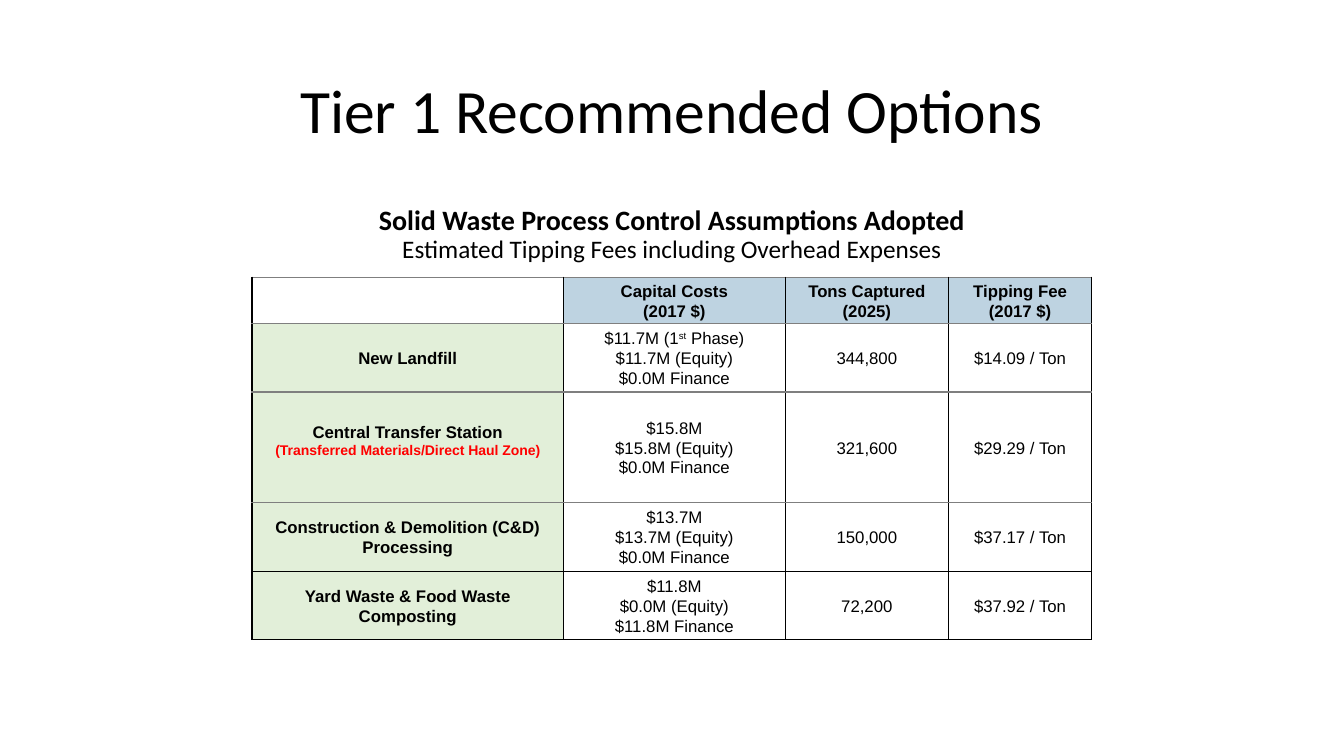
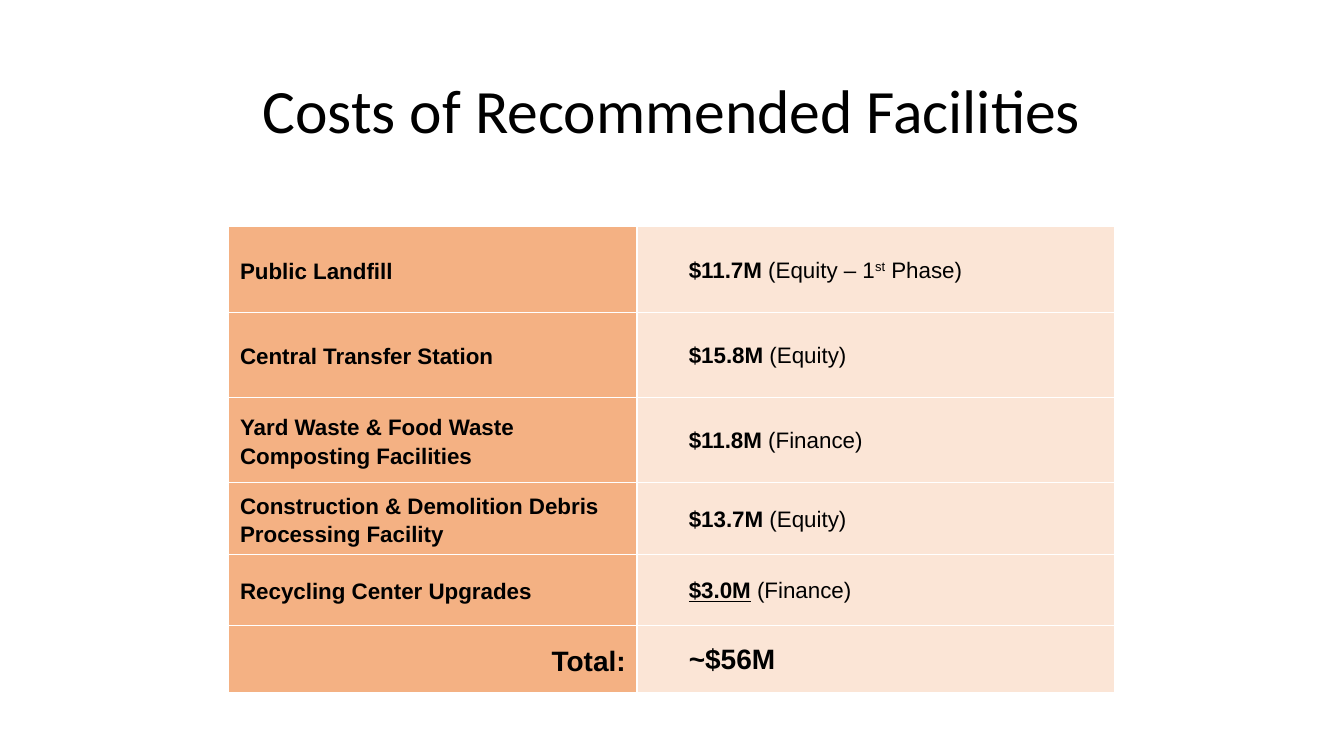
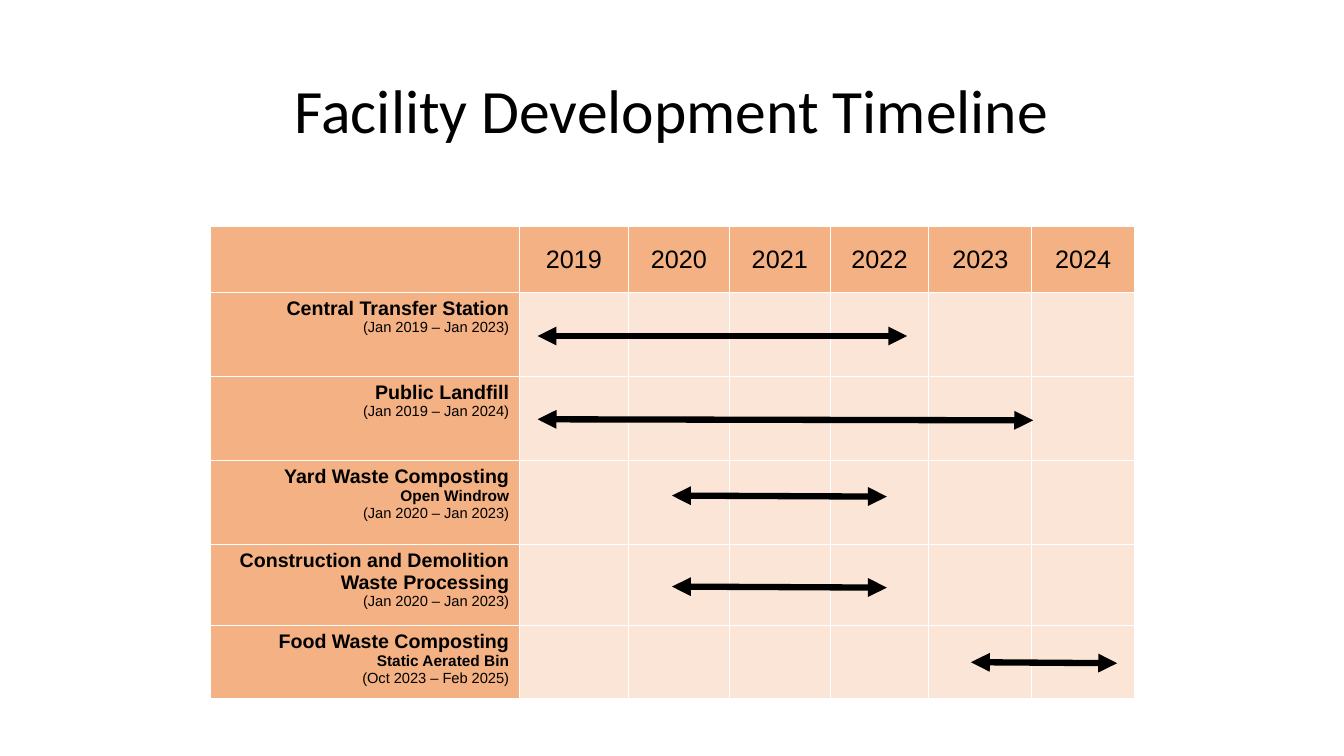
import pptx
import pptx.dml.color
import pptx.enum.shapes
import pptx.enum.text
import pptx.oxml
import pptx.oxml.ns
import pptx.util

Pt = pptx.util.Pt
ALIGN = pptx.enum.text.PP_ALIGN
MIDDLE = pptx.enum.text.MSO_ANCHOR.MIDDLE
TOP = pptx.enum.text.MSO_ANCHOR.TOP

COLORS = {
    "black": "000000", "white": "FFFFFF", "gray": "7F7F7F", "red": "FF0000",
    "blue": "BED3E1", "green": "E2EFD9", "orange": "F4B183", "peach": "FBE5D6",
}
RAISED_ST = ("st", {"raised": True})


def rgb(name):
    return pptx.dml.color.RGBColor.from_string(COLORS[name])


class Slides:
    """Holds the shared style and the slide being filled."""

    title_frame = (66, 29, 828, 104)

    def __init__(self):
        self.deck = pptx.Presentation()
        self.deck.slide_width, self.deck.slide_height = Pt(960), Pt(540)
        self.page = None

    def start(self, title):
        self.page = self.deck.slides.add_slide(self.deck.slide_layouts[5])
        box = self.page.shapes.title
        box.left, box.top, box.width, box.height = map(Pt, self.title_frame)
        box.text_frame.vertical_anchor = MIDDLE
        self.fill_text(box.text_frame, [title], font="Calibri", size=44, spacing=0.9)

    def fill_text(self, frame, lines, font="Arial", align=ALIGN.CENTER, spacing=1.0,
                  **base):
        """A line is a string or a list of spans; a span is a string or (string, style)."""
        frame.word_wrap = True
        for index, line in enumerate(lines):
            para = frame.paragraphs[0] if index == 0 else frame.add_paragraph()
            para.alignment, para.line_spacing = align, spacing
            para.space_before = Pt(0)
            for span in line if isinstance(line, list) else [line]:
                text, style = span if isinstance(span, tuple) else (span, {})
                self.add_span(para, text, font, **{**base, **style})

    def add_span(self, para, text, font, size=12, bold=False, color="black",
                 underline=False, raised=False):
        span = para.add_run()
        span.text = text
        span.font.name, span.font.size = font, Pt(size)
        span.font.bold, span.font.underline = bold, underline
        span.font.color.rgb = rgb(color)
        if raised:
            span._r.get_or_add_rPr().set("baseline", "30000")

    def text(self, frame, lines, **style):
        box = self.page.shapes.add_textbox(*map(Pt, frame))
        self.fill_text(box.text_frame, lines, **style)

    def table(self, left, top, widths, heights):
        table = self.page.shapes.add_table(
            len(heights), len(widths), Pt(left), Pt(top),
            Pt(sum(widths)), Pt(sum(heights))).table
        table.first_row = table.horz_banding = False
        for column, width in zip(table.columns, widths):
            column.width = Pt(width)
        for row, height in zip(table.rows, heights):
            row.height = Pt(height)
        return table

    def cell(self, cell, fill, lines=(), margins=(7.2, 3.6, 7.2, 3.6), anchor=MIDDLE,
             borders=("white",) * 4, **style):
        """Margins run left, top, right, bottom; borders left, right, top, bottom."""
        properties = cell._tc.get_or_add_tcPr()
        for side, color in zip("LRTB", borders):
            properties.append(pptx.oxml.parse_xml(
                f'<a:ln{side} {pptx.oxml.ns.nsdecls("a")} w="12700"><a:solidFill>'
                f'<a:srgbClr val="{COLORS[color]}"/></a:solidFill></a:ln{side}>'))
        cell.fill.solid()
        cell.fill.fore_color.rgb = rgb(fill)
        cell.vertical_anchor = anchor
        (cell.margin_left, cell.margin_top,
         cell.margin_right, cell.margin_bottom) = map(Pt, margins)
        self.fill_text(cell.text_frame, lines, **style)

    def arrow(self, x1, y1, x2, y2):
        line = self.page.shapes.add_connector(
            pptx.enum.shapes.MSO_CONNECTOR.STRAIGHT, Pt(x1), Pt(y1), Pt(x2), Pt(y2))
        line.line.color.rgb = rgb("black")
        line.line.width = Pt(4.5)
        for end in ("headEnd", "tailEnd"):
            line.line._get_or_add_ln().append(pptx.oxml.parse_xml(
                f'<a:{end} {pptx.oxml.ns.nsdecls("a")} type="triangle"/>'))
        line._element.spPr.append(pptx.oxml.parse_xml(
            f'<a:effectLst {pptx.oxml.ns.nsdecls("a")}/>'))


def options_slide(slides):
    slides.start("Tier 1 Recommended Options")
    slides.text((66, 144, 828, 50), [
        [("Solid Waste Process Control Assumptions Adopted", {"size": 20, "bold": True})],
        "Estimated Tipping Fees including Overhead Expenses",
    ], font="Calibri", size=18, spacing=0.9)

    rows = [
        ([], ["Capital Costs", "(2017 $)"], ["Tons Captured (2025)"],
         ["Tipping Fee", "(2017 $)"]),
        (["New Landfill"],
         [["$11.7M (1", RAISED_ST, " Phase)"], "$11.7M (Equity)", "$0.0M Finance"],
         ["344,800"], ["$14.09 / Ton"]),
        (["Central Transfer Station",
          [("(Transferred Materials/Direct Haul Zone)", {"size": 10, "color": "red"})]],
         ["$15.8M", "$15.8M (Equity)", "$0.0M Finance"], ["321,600"], ["$29.29 / Ton"]),
        (["Construction & Demolition (C&D) Processing"],
         ["$13.7M", "$13.7M (Equity)", "$0.0M Finance"], ["150,000"], ["$37.17 / Ton"]),
        (["Yard Waste & Food Waste Composting"],
         ["$11.8M", "$0.0M (Equity)", "$11.8M Finance"], ["72,200"], ["$37.92 / Ton"]),
    ]
    table = slides.table(180, 198, (222.5, 158.5, 116.5, 102.5), (33, 49, 79, 49, 49))
    # Horizontal rules are gray down to the last two rows
    rules = ["gray"] * 4 + ["black"] * 2
    for r, row in enumerate(rows):
        for c, lines in enumerate(row):
            if r == 0:
                fill = "blue" if c else "white"
            else:
                fill = "white" if c else "green"
            side = 5 if c < 2 else 0
            bottom = 10 if (r, c) == (2, 0) else 0
            slides.cell(table.cell(r, c), fill, lines, margins=(side, 0.5, side, bottom),
                        borders=("black", "black", rules[r], rules[r + 1]),
                        bold=r == 0 or c == 0, spacing=1.06)


def costs_slide(slides):
    slides.start("Costs of Recommended Facilities")
    rows = [
        (["Public Landfill"], "$11.7M", [" (Equity – 1", RAISED_ST, " Phase)"]),
        (["Central Transfer Station"], "$15.8M", [" (Equity)"]),
        (["Yard Waste & Food Waste", "Composting Facilities"], "$11.8M", [" (Finance)"]),
        (["Construction & Demolition Debris Processing Facility"], "$13.7M", [" (Equity)"]),
        (["Recycling Center Upgrades"], "$3.0M", [" (Finance)"]),
        (["Total:"], "~$56M", []),
    ]
    table = slides.table(163.5, 162, (291.5, 341.5), (61, 61, 61, 51, 51, 47.5))
    for r, (facility, cost, source) in enumerate(rows):
        total = facility == ["Total:"]
        size = 20 if total else 16
        slides.cell(table.cell(r, 0), "orange", facility, margins=(8, 0.5, 8, 0),
                    align=ALIGN.RIGHT if total else ALIGN.LEFT,
                    spacing=1.15, size=size, bold=True)
        amount = (cost, {"bold": True, "underline": cost == "$3.0M"})
        slides.cell(table.cell(r, 1), "peach", [[amount, *source]], margins=(37, 0.5, 8, 0),
                    align=ALIGN.LEFT, spacing=1.05, size=size)


def timeline_slide(slides):
    slides.start("Facility Development Timeline")
    # Name, process, dates, and the arrow's ends
    facilities = [
        ("Central Transfer Station", "", "(Jan 2019 – Jan 2023)", (384, 240, 648, 240)),
        ("Public Landfill", "", "(Jan 2019 – Jan 2024)", (384, 299.5, 738, 300.25)),
        ("Yard Waste Composting", "Open Windrow", "(Jan 2020 – Jan 2023)",
         (480, 354, 633.5, 354.75)),
        ("Construction and Demolition Waste Processing", "", "(Jan 2020 – Jan 2023)",
         (480, 419, 633.5, 419.75)),
        ("Food Waste Composting", "Static Aerated Bin", "(Oct 2023 – Feb 2025)",
         (693.5, 473, 798, 473.75)),
    ]
    years = range(2019, 2025)
    table = slides.table(150, 162, (221, 78, 72, 72, 70.5, 73.5, 73.5),
                         (47, 60, 60, 60, 58, 52))
    slides.cell(table.cell(0, 0), "orange")
    for c, year in enumerate(years, 1):
        slides.cell(table.cell(0, c), "orange", [str(year)], size=18)
    for r, (name, process, dates, ends) in enumerate(facilities, 1):
        lines = [[(name, {"size": 14, "bold": True})]]
        if process:
            lines.append([(process, {"size": 11, "bold": True})])
        slides.cell(table.cell(r, 0), "orange", lines + [dates], anchor=TOP,
                    align=ALIGN.RIGHT, size=10.5)
        for c in range(1, len(years) + 1):
            slides.cell(table.cell(r, c), "peach")
        slides.arrow(*ends)


def main():
    slides = Slides()
    options_slide(slides)
    costs_slide(slides)
    timeline_slide(slides)
    slides.deck.save("out.pptx")


if __name__ == "__main__":
    main()
